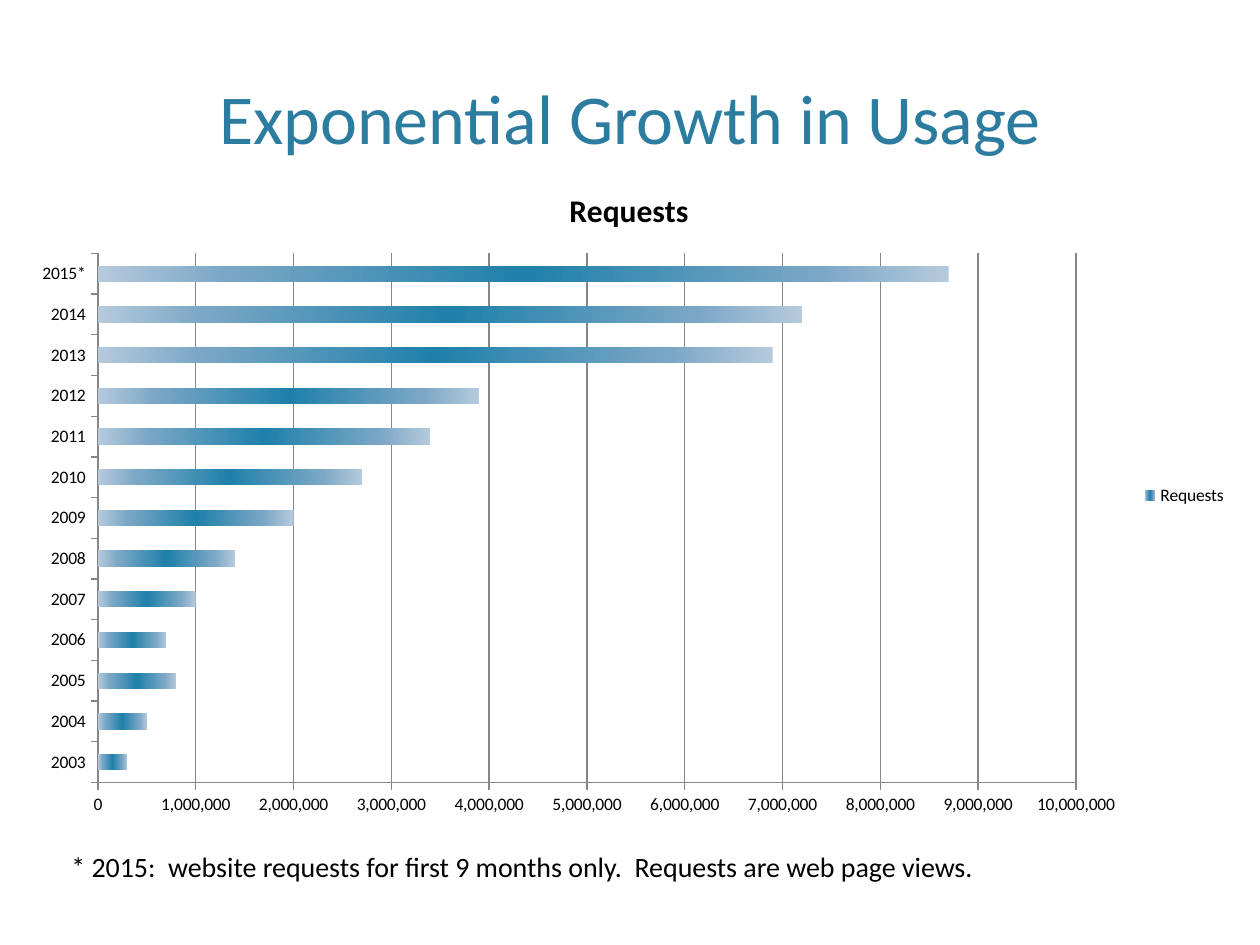
"""Build a slide with a bar chart of yearly website requests."""
import pptx
import pptx.chart.data
import pptx.dml.color
import pptx.enum.chart
import pptx.enum.text
import pptx.oxml
import pptx.oxml.ns
import pptx.util

FONT = "Calibri"
PX = 914400 // 126
TITLE = "Exponential Growth in Usage"
NOTE = "* 2015:  website requests for first 9 months only.  Requests are web page views."
SERIES = "Requests"
REQUESTS = {
    "2003": 300000, "2004": 500000, "2005": 800000, "2006": 700000,
    "2007": 1000000, "2008": 1400000, "2009": 2000000, "2010": 2700000,
    "2011": 3400000, "2012": 3900000, "2013": 6900000, "2014": 7200000,
    "2015*": 8700000,
}
TITLE_BOX = (76, 43, 1108, 122)
CHART_BOX = (18, 163, 1222, 665)
NOTE_BOX = (59, 843, 1089, 47)
BAR_STOPS = [(0, "B5C9DC"), (15, "7BA7C6"), (50, "1F80AA"), (85, "7BA7C6"), (100, "B5C9DC")]


def rgb(value):
    """Return a colour from a hex string."""
    return pptx.dml.color.RGBColor.from_string(value)


def emu(box):
    """Scale a box in px to EMU."""
    return [length * PX for length in box]


def style(font, size, color="000000", bold=False):
    """Set face, size, colour and weight of a font."""
    font.name, font.size, font.bold = FONT, pptx.util.Pt(size), bold
    font.color.rgb = rgb(color)


def add_text(slide, box, text, size, color, wrap):
    """Add a one-paragraph text box."""
    shape = slide.shapes.add_textbox(*emu(box))
    frame = shape.text_frame
    frame.text = text
    frame.word_wrap = wrap
    style(frame.paragraphs[0].runs[0].font, size, color)
    return frame


def fill_gradient(series):
    """Fill the bars with a symmetric horizontal gradient."""
    series.format.fill.solid()
    properties = series.format.fill._xPr
    stops = "".join(
        f'<a:gs pos="{position * 1000}"><a:srgbClr val="{color}"/></a:gs>'
        for position, color in BAR_STOPS
    )
    gradient = pptx.oxml.parse_xml(
        f'<a:gradFill {pptx.oxml.ns.nsdecls("a")} rotWithShape="1">'
        f'<a:gsLst>{stops}</a:gsLst><a:lin ang="0" scaled="0"/></a:gradFill>'
    )
    properties.replace(properties.find(pptx.oxml.ns.qn("a:solidFill")), gradient)


def style_line(line):
    """Give a chart line the axis grey."""
    line.color.rgb = rgb("868686")
    line.width = pptx.util.Pt(0.75)


def add_requests_chart(slide):
    """Add the bar chart of requests by year."""
    data = pptx.chart.data.CategoryChartData(number_format="#,##0")
    data.categories = list(REQUESTS)
    data.add_series(SERIES, list(REQUESTS.values()))
    kind = pptx.enum.chart.XL_CHART_TYPE.BAR_CLUSTERED
    chart = slide.shapes.add_chart(kind, *emu(CHART_BOX), data).chart
    style(chart.font, 10)

    chart.has_title = True
    title = chart.chart_title.text_frame
    title.text = SERIES
    style(title.paragraphs[0].runs[0].font, 18, bold=True)

    chart.has_legend = True
    chart.legend.position = pptx.enum.chart.XL_LEGEND_POSITION.RIGHT
    chart.legend.include_in_layout = False

    plot = chart.plots[0]
    plot.gap_width = 150
    plot.vary_by_categories = False
    fill_gradient(plot.series[0])

    for axis in (chart.category_axis, chart.value_axis):
        axis.major_tick_mark = pptx.enum.chart.XL_TICK_MARK.OUTSIDE
        axis.minor_tick_mark = pptx.enum.chart.XL_TICK_MARK.NONE
        style_line(axis.format.line)
    chart.category_axis.has_major_gridlines = False
    values = chart.value_axis
    values.minimum_scale, values.maximum_scale, values.major_unit = 0, 10000000, 1000000
    values.has_major_gridlines = True
    style_line(values.major_gridlines.format.line)
    values.tick_labels.number_format = "#,##0"
    values.tick_labels.number_format_is_linked = False


def main():
    """Build and save the slide."""
    presentation = pptx.Presentation()
    presentation.slide_width = pptx.util.Inches(10)
    presentation.slide_height = pptx.util.Inches(7.5)
    slide = presentation.slides.add_slide(presentation.slide_layouts[6])

    heading = add_text(slide, TITLE_BOX, TITLE, 40, "2C7C9F", True)
    heading.vertical_anchor = pptx.enum.text.MSO_ANCHOR.BOTTOM
    heading.paragraphs[0].alignment = pptx.enum.text.PP_ALIGN.CENTER

    note = add_text(slide, NOTE_BOX, NOTE, 16, "000000", False)
    note.auto_size = pptx.enum.text.MSO_AUTO_SIZE.SHAPE_TO_FIT_TEXT

    add_requests_chart(slide)
    presentation.save("out.pptx")


if __name__ == "__main__":
    main()
